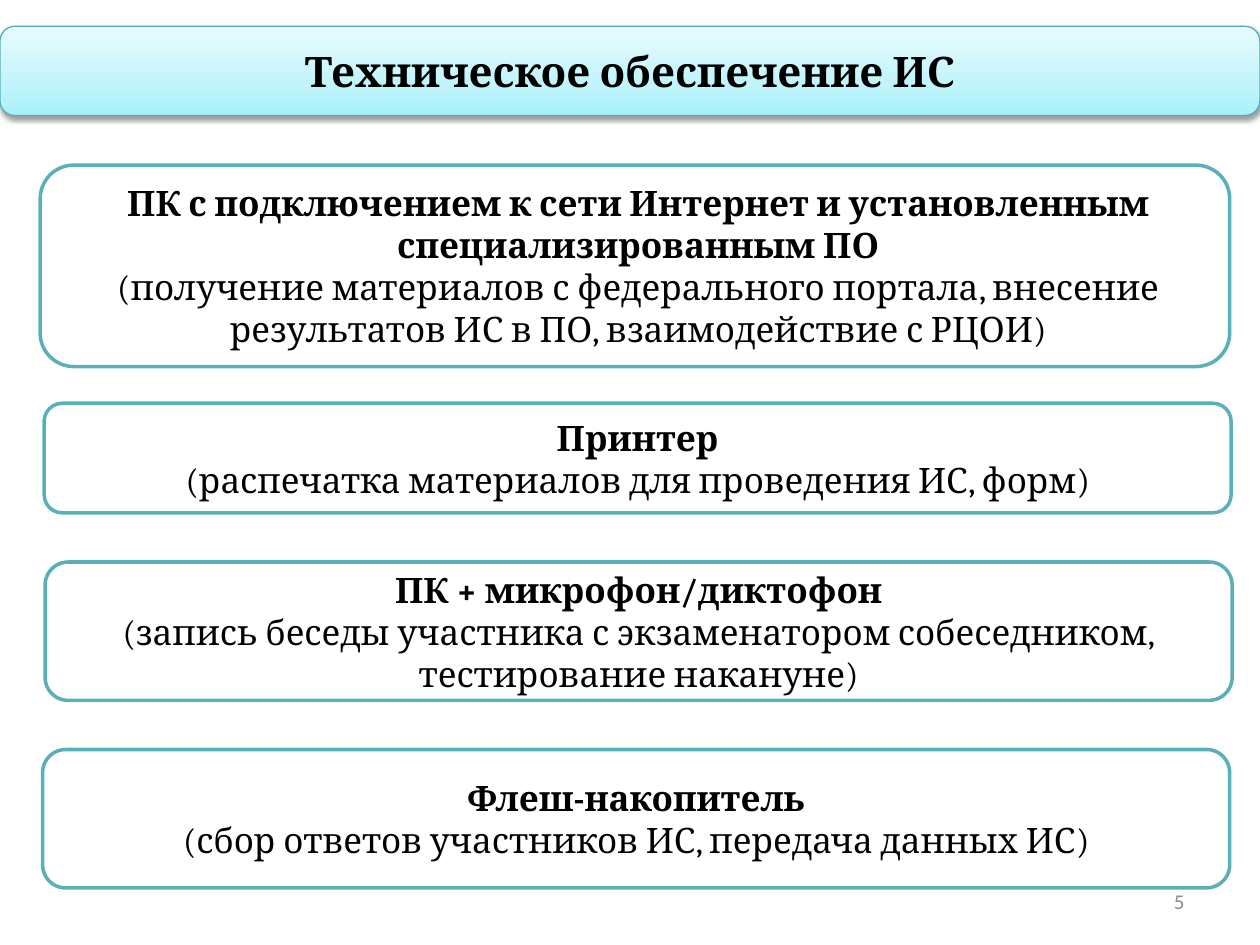
from copy import deepcopy

from lxml.etree import SubElement
from pptx import Presentation
from pptx.dml.color import RGBColor
from pptx.enum.shapes import MSO_SHAPE as Preset
from pptx.enum.text import MSO_ANCHOR as Anchor, PP_ALIGN as Align
from pptx.oxml.ns import qn
from pptx.util import Cm, Pt

COLORS = {
    "text": "000000", "number": "8C8C8C", "card": "FFFFFF",
    "card_line": "59B0B9", "bar_line": "55AEB7", "shadow": "000000",
}
BAR_STOPS = [(0, "A8F1FB"), (0.35, "C2F4FB"), (1, "E7FCFF")]

# left, top, width, height in cm, paragraph indent in cm, heading, detail lines
CARDS = [
    (0.81, 3.33, 23.98, 4.06, 0.13,
     "ПК с подключением к сети Интернет и установленным специализированным ПО",
     ["(получение материалов с федерального портала, внесение результатов ИС в ПО, "
      "взаимодействие с РЦОИ)"]),
    (0.89, 8.13, 23.93, 2.21, 0, "Принтер",
     ["(распечатка материалов для проведения ИС, форм)"]),
    (0.91, 11.33, 23.93, 2.79, 0, "ПК + микрофон/диктофон",
     ["(запись беседы участника с экзаменатором собеседником,",
      "тестирование накануне)"]),
    (0.86, 15.11, 23.93, 2.79, 0, "Флеш-накопитель",
     ["(сбор ответов участников ИС, передача данных ИС)"]),
]


def write(box, lines, color="text", align=Align.CENTER, indent=0, **font):
    """Fill a box with (text, bold) lines, one paragraph each."""
    frame = box.text_frame
    frame.word_wrap = True
    frame.vertical_anchor = Anchor.MIDDLE
    for index, (text, bold) in enumerate(lines):
        para = frame.add_paragraph() if index else frame.paragraphs[0]
        para.alignment = align
        if indent:
            properties = para._p.get_or_add_pPr()
            properties.set("marL", str(Cm(indent)))
            properties.set("indent", "0")
        span = para.add_run()
        span.text = text
        for name, value in {**font, "bold": bold}.items():
            setattr(span.font, name, value)
        span.font.color.rgb = RGBColor.from_string(COLORS[color])


def add_rounded(page, place, line_color, line_width):
    shape = page.shapes.add_shape(Preset.ROUNDED_RECTANGLE, *map(Cm, place))
    shape.shadow.inherit = False
    shape.line.color.rgb = RGBColor.from_string(COLORS[line_color])
    shape.line.width = Pt(line_width)
    return shape


deck = Presentation()
deck.slide_width, deck.slide_height = Cm(25.4), Cm(19.05)
page = deck.slides.add_slide(deck.slide_layouts[5])

# Title bar with a three-stop gradient
bar_place = (0, 0.53, 25.4, 1.8)
bar = add_rounded(page, bar_place, "bar_line", 0.75)
bar.fill.gradient()
bar.fill.gradient_angle = 90
stop_list = bar.element.spPr.find(".//" + qn("a:gsLst"))
stop_list.append(deepcopy(stop_list[-1]))
for stop, (position, color) in zip(bar.fill.gradient_stops, BAR_STOPS):
    stop.position = position
    stop.color.rgb = RGBColor.from_string(color)

# Soft shadow below the bar
effects = bar.element.spPr.find(qn("a:effectLst"))
shadow = SubElement(effects, qn("a:outerShdw"), blurRad=str(Pt(3.1)),
                    dist=str(Pt(1.6)), dir="5400000", rotWithShape="0")
shade = SubElement(shadow, qn("a:srgbClr"), val=COLORS["shadow"])
SubElement(shade, qn("a:alpha"), val="38000")

# Title, in front of its bar
title = page.shapes.title
title.left, title.top, title.width, title.height = map(Cm, bar_place)
title.element.addprevious(bar.element)
write(title, [("Техническое обеспечение ИС", True)], name="Cambria", size=Pt(24))

# Equipment cards
for *place, indent, heading, details in CARDS:
    card = add_rounded(page, place, "card_line", 2)
    card.fill.solid()
    card.fill.fore_color.rgb = RGBColor.from_string(COLORS["card"])
    lines = [(heading, True)] + [(detail, False) for detail in details]
    write(card, lines, indent=indent, name="Cambria", size=Pt(20))

# Page number
number = page.shapes.add_textbox(Cm(18.21), Cm(17.65), Cm(5.92), Cm(1.02))
write(number, [("5", False)], "number", Align.RIGHT, name="Calibri", size=Pt(12))

deck.save("out.pptx")
